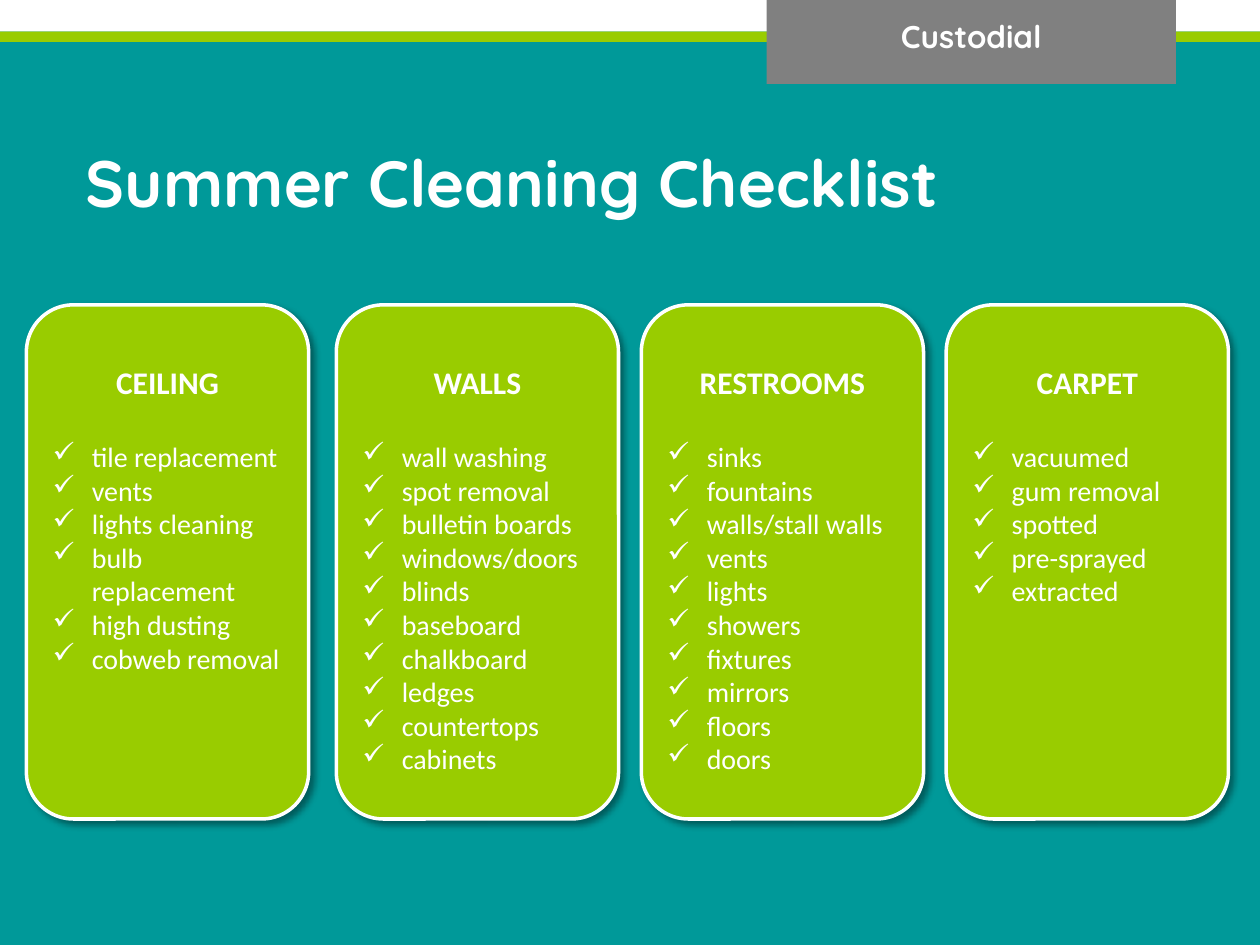
import pptx
import pptx.util
import pptx.dml.color
import pptx.enum.shapes
import pptx.enum.text
import pptx.oxml
import pptx.oxml.ns
from dataclasses import dataclass

Pt = pptx.util.Pt
RGB = pptx.dml.color.RGBColor.from_string
SHAPE = pptx.enum.shapes.MSO_SHAPE
ALIGN = pptx.enum.text.PP_ALIGN
ANCHOR = pptx.enum.text.MSO_ANCHOR


@dataclass(frozen=True)
class Theme:
    teal: str = "009999"
    lime: str = "99CC00"
    gray: str = "808080"
    white: str = "FFFFFF"
    title_font: str = "Quicksand"
    body_font: str = "Calibri"
    title_size: float = 37.4
    heading_size: float = 18
    item_size: float = 16


THEME = Theme()
CARD_LEFTS = (15.1, 192.2, 366.5, 540.7)
CARD_TOP, CARD_WIDTH, CARD_HEIGHT = 174.2, 161.3, 293.8
HEADING_LINE = 22
ITEM_INDENT = 22.5

CHECKLISTS = {
    "CEILING": ["tile replacement", "vents", "lights cleaning",
                "bulb replacement", "high dusting", "cobweb removal"],
    "WALLS": ["wall washing", "spot removal", "bulletin boards",
              "windows/doors", "blinds", "baseboard", "chalkboard",
              "ledges", "countertops", "cabinets"],
    "RESTROOMS": ["sinks", "fountains", "walls/stall walls", "vents",
                  "lights", "showers", "fixtures", "mirrors", "floors",
                  "doors"],
    "CARPET": ["vacuumed", "gum removal", "spotted", "pre-sprayed",
               "extracted"],
}


def add_block(slide, kind, box, color):
    sp = slide.shapes.add_shape(kind, *map(Pt, box))
    sp.shadow.inherit = False
    sp.fill.solid()
    sp.fill.fore_color.rgb = RGB(color)
    sp.line.fill.background()
    return sp


def write(p, text, font, size, bold, align):
    p.text = text
    p.alignment = align
    for r in p.runs:
        r.font.name = font
        r.font.size = Pt(size)
        r.font.bold = bold
        r.font.color.rgb = RGB(THEME.white)


def add_label(slide, box, text, size, align, anchor):
    sp = slide.shapes.add_textbox(*map(Pt, box))
    tf = sp.text_frame
    tf.word_wrap = True
    tf.vertical_anchor = anchor
    write(tf.paragraphs[0], text, THEME.title_font, size, True, align)


def add_shadow(sp):
    effects = sp._element.spPr.find(pptx.oxml.ns.qn("a:effectLst"))
    effects.append(pptx.oxml.parse_xml(
        f'<a:outerShdw {pptx.oxml.ns.nsdecls("a")} blurRad="{Pt(4)}" '
        f'dist="{Pt(3)}" dir="2700000" algn="tl" rotWithShape="0">'
        '<a:srgbClr val="000000"><a:alpha val="40000"/></a:srgbClr>'
        '</a:outerShdw>'))


def add_check_mark(p):
    pPr = p._p.get_or_add_pPr()
    pPr.set("marL", str(Pt(ITEM_INDENT)))
    pPr.set("indent", str(-Pt(ITEM_INDENT)))
    pPr.append(pptx.oxml.parse_xml(
        f'<a:buChar {pptx.oxml.ns.nsdecls("a")} char="✓"/>'))


def add_card(slide, box, heading, items):
    sp = add_block(slide, SHAPE.ROUNDED_RECTANGLE, box, THEME.lime)
    sp.line.color.rgb = RGB(THEME.white)
    sp.line.width = Pt(2)
    add_shadow(sp)
    tf = sp.text_frame
    tf.word_wrap = True
    tf.vertical_anchor = ANCHOR.TOP
    tf.margin_top = Pt(3.6 + HEADING_LINE)
    p = tf.paragraphs[0]
    write(p, heading, THEME.body_font, THEME.heading_size, True, ALIGN.CENTER)
    p.space_after = Pt(HEADING_LINE)
    for item in items:
        p = tf.add_paragraph()
        add_check_mark(p)
        write(p, item, THEME.body_font, THEME.item_size, False, ALIGN.LEFT)


def add_cards(slide):
    for left, (heading, items) in zip(CARD_LEFTS, CHECKLISTS.items()):
        box = (left, CARD_TOP, CARD_WIDTH, CARD_HEIGHT)
        add_card(slide, box, heading, items)


def add_banner(slide, width):
    add_block(slide, SHAPE.RECTANGLE, (0, 18, width, 6), THEME.lime)
    add_block(slide, SHAPE.RECTANGLE, (0, 0, width, 18), THEME.white)


def add_tab(slide, box, text):
    left, top, width, height = box
    add_block(slide, SHAPE.RECTANGLE, box, THEME.gray)
    add_label(slide, (left, top + 6, width, 30), text, THEME.heading_size,
              ALIGN.CENTER, ANCHOR.TOP)


def main():
    prs = pptx.Presentation()
    prs.slide_width, prs.slide_height = Pt(720), Pt(540)
    slide = prs.slides.add_slide(prs.slide_layouts[6])
    slide.background.fill.solid()
    slide.background.fill.fore_color.rgb = RGB(THEME.teal)
    add_banner(slide, 720)
    add_cards(slide)
    add_label(slide, (42, 69, 553, 69), "Summer Cleaning Checklist",
              THEME.title_size, ALIGN.LEFT, ANCHOR.MIDDLE)
    add_tab(slide, (438, 0, 234, 48), "Custodial")
    prs.save("out.pptx")


if __name__ == "__main__":
    main()
